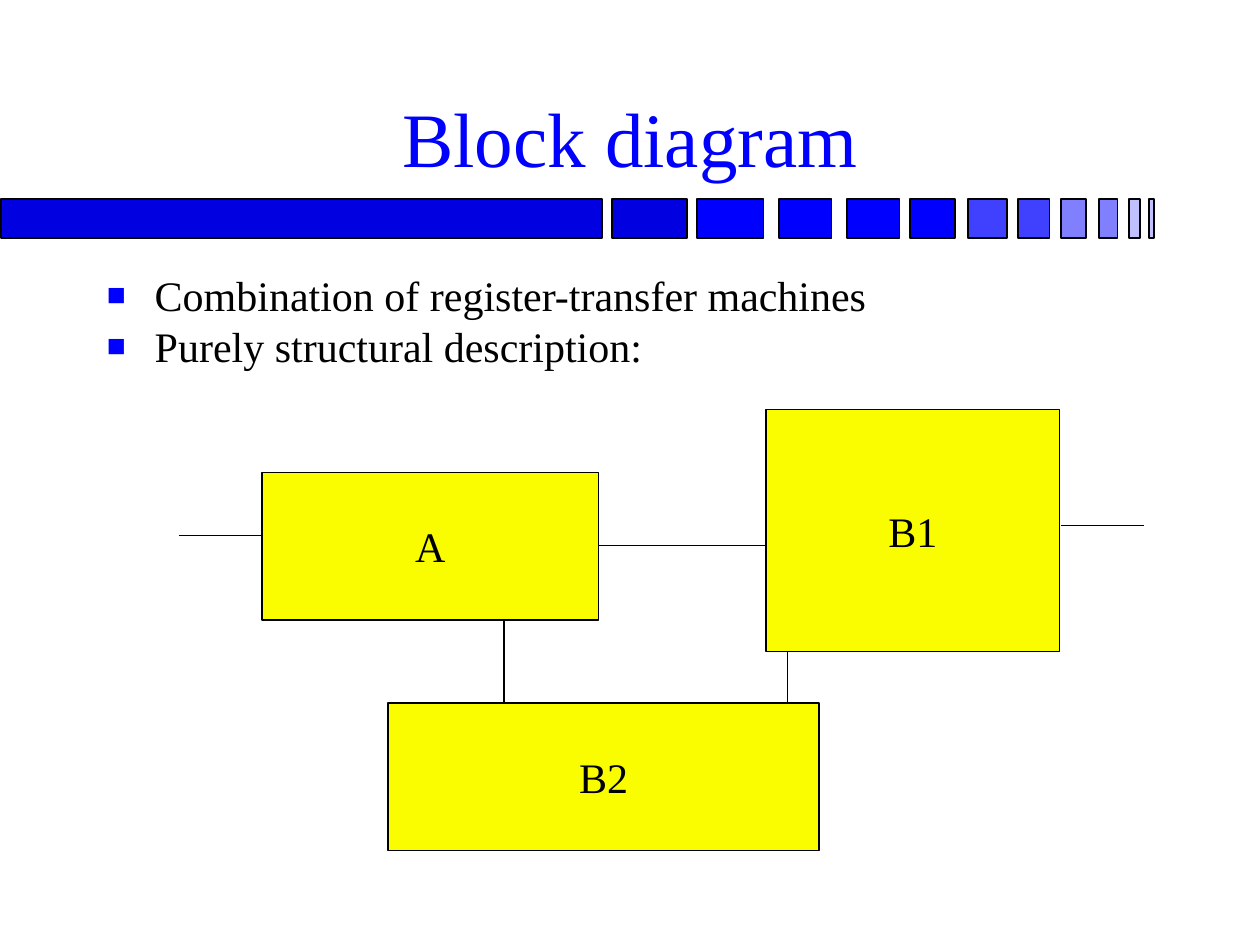
from lxml.etree import SubElement
from pptx import Presentation
from pptx.dml.color import RGBColor
from pptx.enum.shapes import MSO_CONNECTOR as Connector, MSO_SHAPE as Shape
from pptx.enum.text import MSO_ANCHOR as Anchor, PP_ALIGN as Align
from pptx.oxml.ns import qn
from pptx.util import Pt

PX = 9144  # 100 px to the inch
FONT = "Times New Roman"
BLACK, BLUE, YELLOW = "000000", "0000FF", "FAFD00"


def px(*lengths):
    return [length * PX for length in lengths]


def color(value):
    return RGBColor.from_string(value)


def set_all(target, **values):
    for name, value in values.items():
        setattr(target, name, value)


def draw_outline(item):
    item.line.color.rgb = color(BLACK)
    item.line.width = Pt(1)


def add_rect(page, left, top, width, height, fill):
    rect = page.shapes.add_shape(Shape.RECTANGLE, *px(left, top, width, height))
    rect.shadow.inherit = False
    rect.fill.solid()
    rect.fill.fore_color.rgb = color(fill)
    draw_outline(rect)
    return rect


def add_wire(page, x1, y1, x2, y2):
    wire = page.shapes.add_connector(Connector.STRAIGHT, *px(x1, y1, x2, y2))
    draw_outline(wire)
    SubElement(wire._element.spPr, qn("a:effectLst"))


def write(para, text, size, ink=BLACK, **layout):
    set_all(para, **layout)
    span = para.add_run()
    span.text = text
    set_all(span.font, name=FONT, size=Pt(size))
    span.font.color.rgb = color(ink)


def add_bullet(para, indent):
    props = para._p.get_or_add_pPr()
    props.set("marL", str(indent * PX))
    props.set("indent", str(-indent * PX))
    tint = SubElement(props, qn("a:buClr"))
    SubElement(tint, qn("a:srgbClr"), val=BLUE)
    SubElement(props, qn("a:buSzPct"), val="75000")
    SubElement(props, qn("a:buFont"), typeface=FONT)
    SubElement(props, qn("a:buChar"), char="■")


def add_title(page, box, text):
    frame = page.shapes.add_textbox(*px(*box)).text_frame
    set_all(frame, word_wrap=True, vertical_anchor=Anchor.BOTTOM)
    write(frame.paragraphs[0], text, 44, BLUE, alignment=Align.CENTER)


def add_fading_bar(page, box):
    left, top, _, height = box
    # offset, width and fill of each segment
    segments = [
        (0, 477, "0000E0"), (485, 59, "0000E0"),
        (552, 53, BLUE), (617, 42, BLUE), (671, 42, BLUE), (721, 36, BLUE),
        (767, 31, "4040FF"), (807, 25, "4040FF"),
        (841, 20, "8080FF"), (871, 15, "8080FF"),
        (895, 9, "C0C0FF"), (911, 4, "C0C0FF"),
    ]
    for offset, width, fill in segments:
        add_rect(page, left + offset, top, width, height, fill)


def add_bullets(page, box, lines):
    frame = page.shapes.add_textbox(*px(*box)).text_frame
    frame.word_wrap = True
    for index, text in enumerate(lines):
        para = frame.add_paragraph() if index else frame.paragraphs[0]
        write(para, text, 24, line_spacing=0.8, space_before=Pt(6))
        add_bullet(para, 38)


def add_block_diagram(page, box):
    left, top, width, _ = box
    # machines: name, offset and size
    machines = [
        ("B1", 466, 0, 233, 192),
        ("A", 66, 50, 267, 117),
        ("B2", 166, 233, 342, 117),
    ]
    for name, x, y, wide, high in machines:
        block = add_rect(page, left + x, top + y, wide, high, YELLOW)
        frame = block.text_frame
        set_all(frame, word_wrap=False, vertical_anchor=Anchor.MIDDLE)
        write(frame.paragraphs[0], name, 24, alignment=Align.CENTER)

    # wires: input, A-B1, output, A-B2, B1-B2
    wires = [
        (0, 100, 66, 100), (333, 108, 466, 108), (700, 92, width, 92),
        (258, 167, 258, 233), (483, 192, 483, 233),
    ]
    for x1, y1, x2, y2 in wires:
        add_wire(page, left + x1, top + y1, left + x2, top + y2)


def main():
    deck = Presentation()
    deck.slide_width, deck.slide_height = px(1000, 750)
    page = deck.slides.add_slide(deck.slide_layouts[6])
    add_fading_bar(page, (1, 158, 915, 31))
    add_title(page, (75, 21, 850, 129), "Block diagram")
    add_bullets(page, (75, 217, 850, 83), [
        "Combination of register-transfer machines",
        "Purely structural description:",
    ])
    add_block_diagram(page, (142, 325, 766, 350))
    deck.save("out.pptx")


if __name__ == "__main__":
    main()
